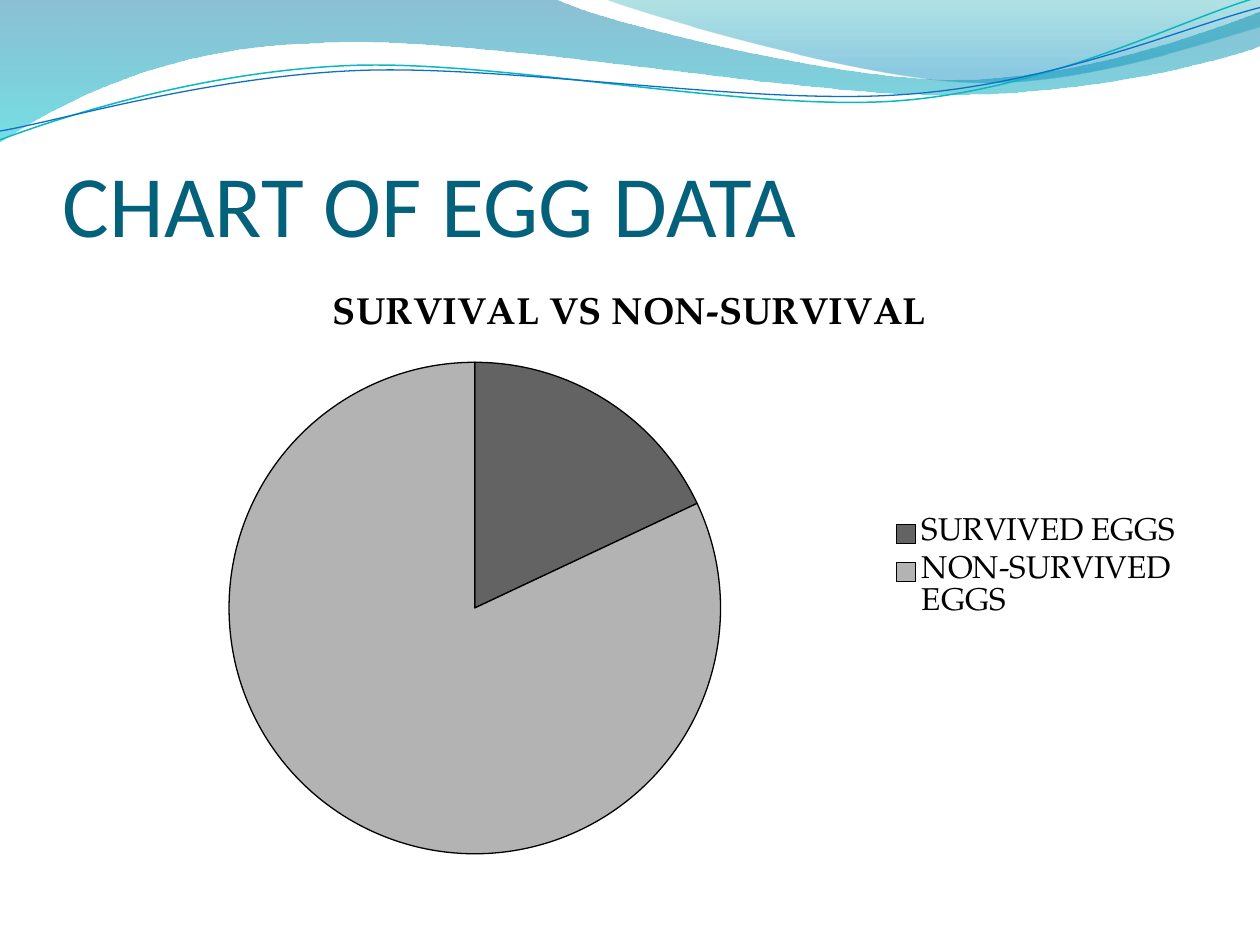
import math
from dataclasses import dataclass
from typing import Optional

from lxml import etree
from pptx import Presentation
from pptx import util as u
from pptx.chart.data import CategoryChartData
from pptx.dml.color import RGBColor
from pptx.enum import chart as ch, text
from pptx.oxml import parse_xml
from pptx.oxml.ns import nsdecls, qn

# Grid of 1000 columns by 750 rows over a 10 x 7.5 inch slide
COLS, ROWS = 1000, 750
WIDTH, HEIGHT = u.Inches(10), u.Inches(7.5)
CELL = WIDTH // COLS

COLORS = {
    "title": "04617B", "text": "000000", "survived": "636363", "lost": "B3B3B3",
    "deep": "0074A1", "aqua": "00C6CF", "teal": "00A1A9", "sky": "008BBF",
    "line_teal": "0AB8BF", "line_blue": "0F6FC6",
}
CHART_FONT = "TeX Gyre Pagella"
TILT = 357.3  # degrees, for the thin lines


@dataclass
class Stop:
    position: float
    color: str
    alpha: int  # percent


@dataclass
class Wave:
    """Segments hold one point for a line, three for a Bezier curve."""
    start: tuple
    segments: list
    stops: Optional[list] = None
    line: Optional[tuple] = None  # colour, points
    center: Optional[tuple] = None  # pivot of a tilted wave


WAVES = [
    # Filled bands
    Wave((0, 0), [[(440, -1)],
                  [(476, 17), (664, 63), (758, 63)], [(853, 63), (958, 26), (1000, 9)],
                  [(1001, 36)],
                  [(983, 44), (870, 76), (746, 75)], [(622, 75), (382, 28), (257, 34)],
                  [(129, 36), (46, 83), (-1, 113)]],
         stops=[Stop(0, "deep", 45), Stop(1, "aqua", 55)]),
    Wave((479, -1), [[(509, 11), (682, 62), (769, 65)], [(856, 69), (961, 32), (1000, 21)],
                     [(1000, 0)]],
         stops=[Stop(0, "teal", 30), Stop(0.8, "sky", 45)]),
    # Thin lines
    Wave((0, 111), [[(48, 93), (158, 57), (277, 52)], [(395, 47), (593, 89), (713, 80)],
                    [(833, 71), (938, 15), (998, -2)]],
         line=("line_teal", 0.85), center=(499, 57.5)),
    Wave((0, 104), [[(47, 96), (164, 61), (283, 56)], [(403, 51), (597, 84), (717, 75)],
                    [(836, 67), (941, 21), (1000, 6)]],
         line=("line_blue", 0.75), center=(499.5, 59)),
]


def rgb(name: str) -> RGBColor:
    return RGBColor.from_string(COLORS[name])


def set_all(obj, values: dict) -> None:
    for name, value in values.items():
        setattr(obj, name, value)


def level(point: tuple, center: Optional[tuple]) -> tuple:
    """Slide position in EMU, with the tilt around the center taken out."""
    x, y = point
    if center:
        angle = math.radians(-TILT)
        dx, dy = x - center[0], y - center[1]
        x = center[0] + dx * math.cos(angle) - dy * math.sin(angle)
        y = center[1] + dx * math.sin(angle) + dy * math.cos(angle)
    return round(x * CELL), round(y * CELL)


def bend(sp, segments: list) -> None:
    """Join each three line steps of a curved segment into one Bezier."""
    steps = iter(list(sp._element.iter(qn("a:lnTo"))))
    for seg in segments:
        parts = [next(steps) for _ in seg]
        if len(parts) == 3:
            curve = etree.Element(qn("a:cubicBezTo"))
            parts[0].addprevious(curve)
            for part in parts:
                curve.append(part[0])
                part.getparent().remove(part)


def draw_wave(s, wave: Wave) -> None:
    points = [level(pt, wave.center) for seg in wave.segments for pt in seg]
    builder = s.shapes.build_freeform(*level(wave.start, wave.center))
    builder.add_line_segments(points, close=wave.line is None)
    sp = builder.convert_to_shape()
    bend(sp, wave.segments)
    sp.shadow.inherit = False
    if wave.line:
        sp.rotation = TILT
        sp.fill.background()
        sp.line.color.rgb = rgb(wave.line[0])
        sp.line.width = u.Pt(wave.line[1])
        return
    sp.line.fill.background()
    sp.fill.gradient()
    sp.fill.gradient_angle = 270
    for target, stop in zip(sp.fill.gradient_stops, wave.stops):
        target.position = stop.position
        target.color.rgb = rgb(stop.color)
    for clr, stop in zip(sp._element.spPr.iter(qn("a:srgbClr")), wave.stops):
        etree.SubElement(clr, qn("a:alpha")).set("val", str(stop.alpha * 1000))


def draw_title(s, words: str) -> None:
    box = s.shapes.add_textbox(50 * CELL, 77 * CELL, 900 * CELL, 125 * CELL)
    tf = box.text_frame
    set_all(tf, {"word_wrap": True, "vertical_anchor": text.MSO_ANCHOR.BOTTOM,
                 "margin_left": 0, "margin_right": 0,
                 "margin_top": u.Inches(0.05), "margin_bottom": 0})
    r = tf.paragraphs[0].add_run()
    r.text = words
    set_all(r.font, {"size": u.Pt(50), "name": "Calibri"})
    r.font.color.rgb = rgb("title")


def place(element, before: str, inner: bool, **percents: float) -> None:
    """Fix a chart part at percents of the chart's size."""
    for old in element.findall(qn("c:layout")):
        element.remove(old)
    target = '<c:layoutTarget val="inner"/>' if inner else ""
    modes = "".join(f'<c:{k}Mode val="edge"/>' for k in "xy")
    sizes = "".join(f'<c:{k} val="{v / 100:.4f}"/>' for k, v in percents.items())
    layout = parse_xml(f'<c:layout {nsdecls("c")}><c:manualLayout>{target}{modes}{sizes}'
                       "</c:manualLayout></c:layout>")
    element.find(qn(before)).addprevious(layout)


def draw_pie(s, title: str, slices: list) -> None:
    data = CategoryChartData()
    data.categories = [name for name, _, _ in slices]
    data.add_series(title, [value for _, value, _ in slices])
    chart = s.shapes.add_chart(ch.XL_CHART_TYPE.PIE, 50 * CELL, 212 * CELL,
                               900 * CELL, 480 * CELL, data).chart
    set_all(chart.font, {"size": u.Pt(18), "name": CHART_FONT})
    chart.font.color.rgb = rgb("text")

    # Heading
    chart.has_title = True
    chart.chart_title.include_in_layout = False
    p = chart.chart_title.text_frame.paragraphs[0]
    r = p.add_run()
    r.text = title
    set_all(r.font, {"size": u.Pt(21.6), "bold": True, "name": CHART_FONT})
    r.font.color.rgb = rgb("text")

    # Slices
    plot = chart.plots[0]
    plot.vary_by_categories = True
    for i, (_, _, color) in enumerate(slices):
        fmt = plot.series[0].points[i].format
        fmt.fill.solid()
        fmt.fill.fore_color.rgb = rgb(color)
        fmt.line.color.rgb = rgb("text")
        fmt.line.width = u.Pt(0.75)

    # Legend and plot positions
    chart.has_legend = True
    set_all(chart.legend, {"position": ch.XL_LEGEND_POSITION.RIGHT,
                           "include_in_layout": False})
    place(chart.legend._element, "c:overlay", False, x=72.8, y=40.4, w=26, h=19)
    place(plot._element.getparent(), "c:pieChart", True, x=14.64, y=15.74, w=43.35, h=81.3)


def main() -> None:
    prs = Presentation()
    set_all(prs, {"slide_width": WIDTH, "slide_height": HEIGHT})
    s = prs.slides.add_slide(prs.slide_layouts[6])
    for wave in WAVES:
        draw_wave(s, wave)
    draw_title(s, "CHART OF EGG DATA")
    draw_pie(s, "SURVIVAL VS NON-SURVIVAL",
             [("SURVIVED EGGS", 18, "survived"), ("NON-SURVIVED EGGS", 82, "lost")])
    prs.save("out.pptx")


if __name__ == "__main__":
    main()
